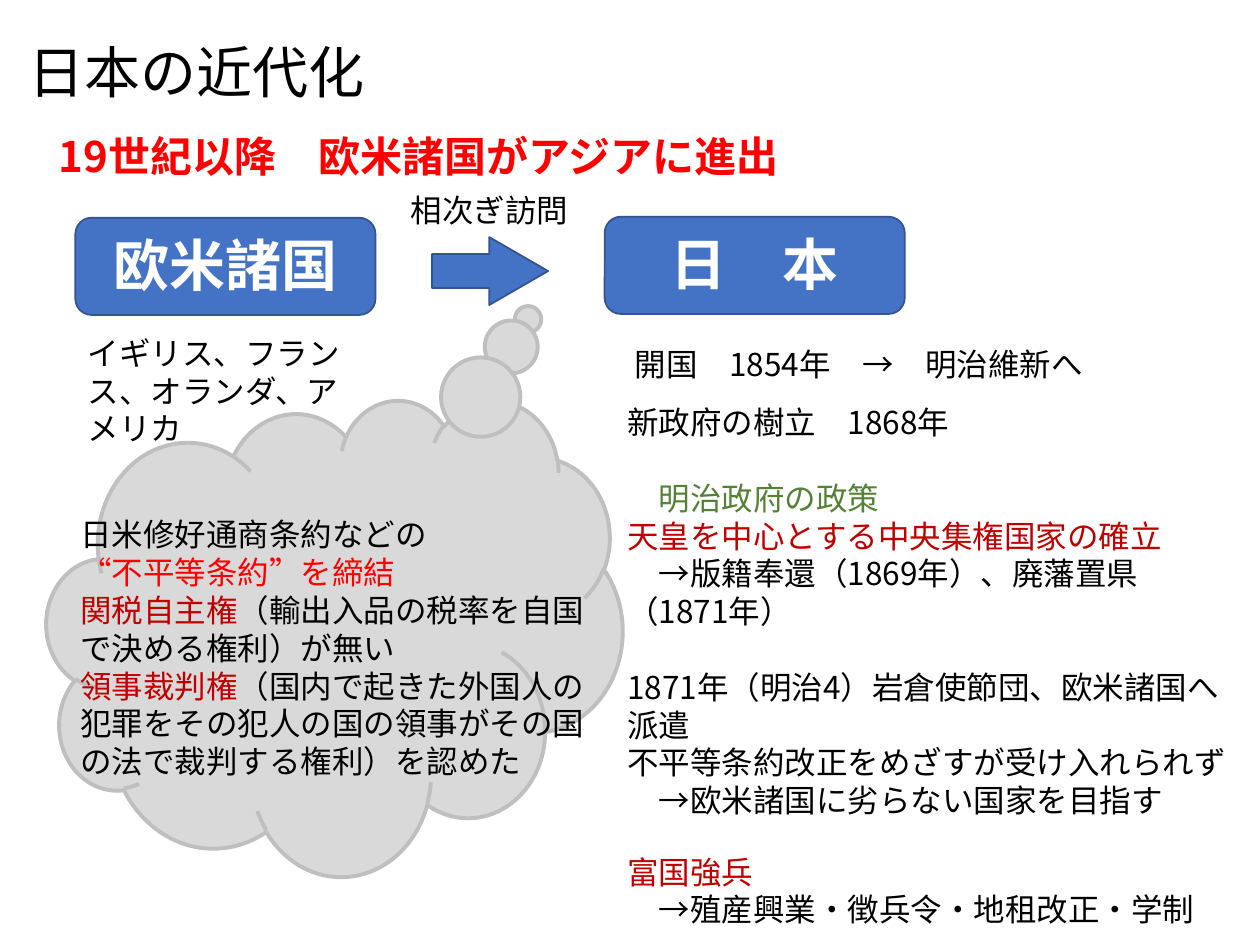
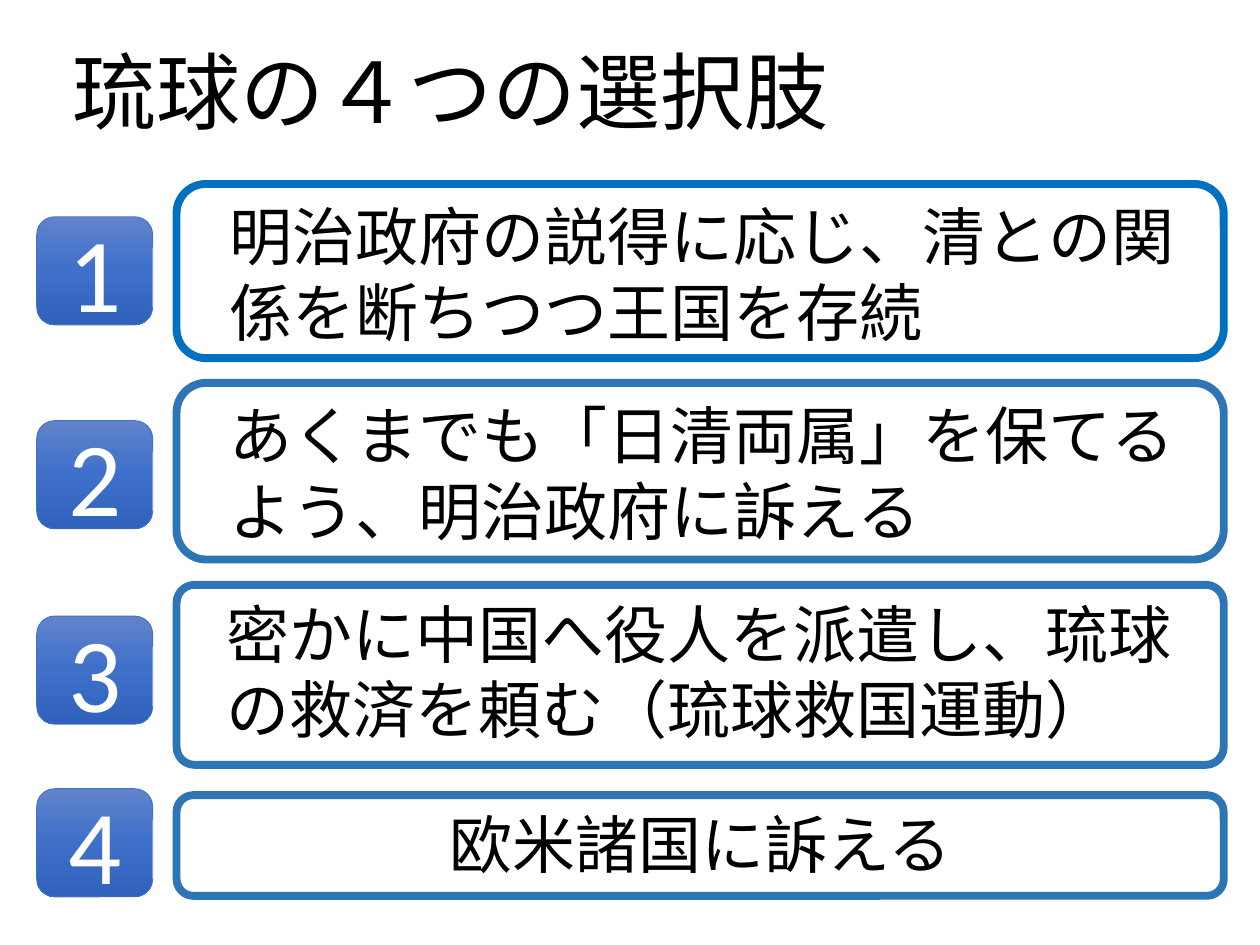
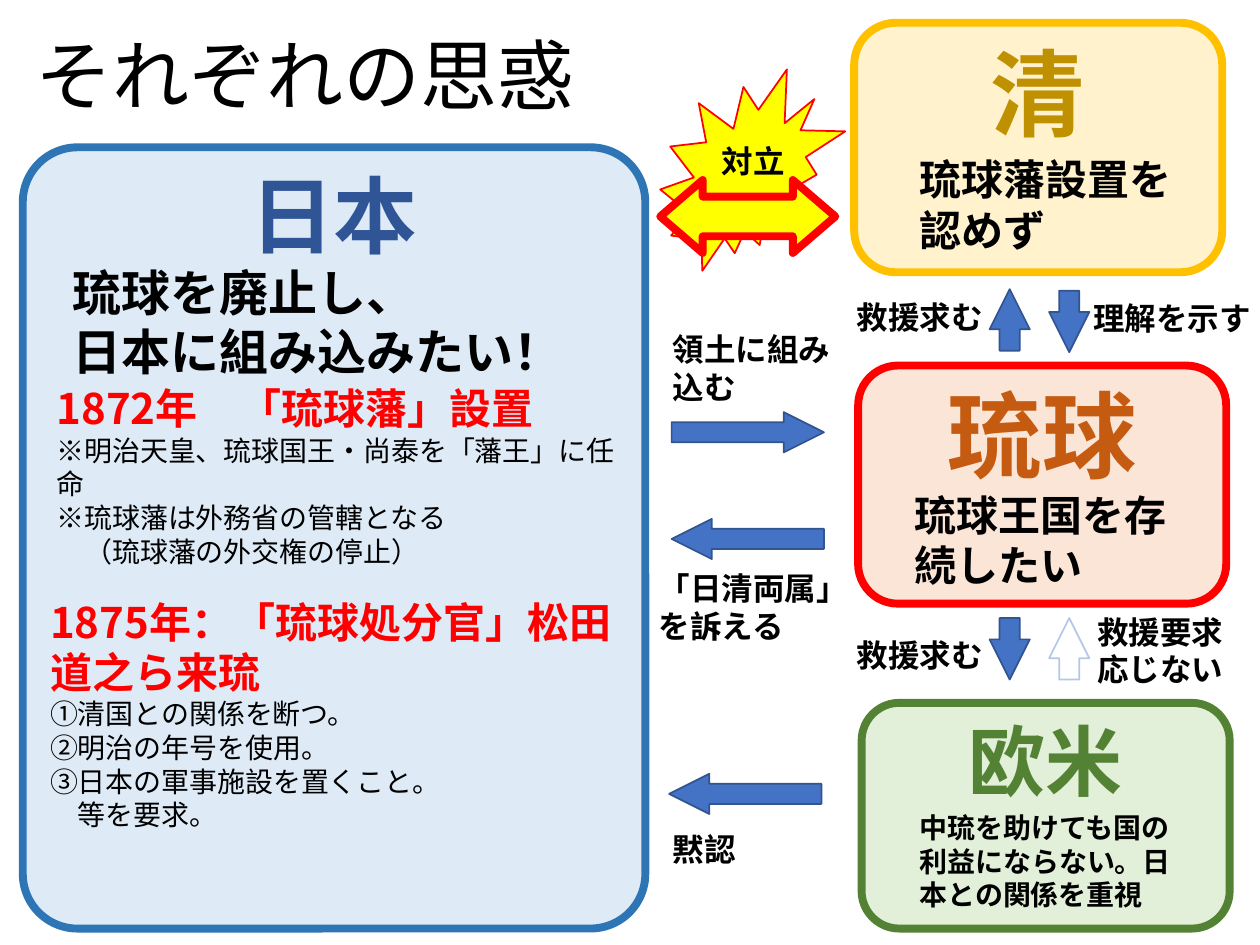
"""Build three slides on Japan's modernisation and the Ryukyu question."""
from copy import deepcopy

from lxml.etree import SubElement
from pptx import Presentation
from pptx.dml.color import RGBColor
from pptx.enum.shapes import MSO_SHAPE
from pptx.enum.text import MSO_ANCHOR, PP_ALIGN
from pptx.oxml.ns import qn
from pptx.util import Cm, Pt

C = {
    "black": "000000", "white": "FFFFFF", "red": "FF0000", "crimson": "C00000",
    "green": "548235", "blue": "4472C4", "edge": "325491", "frame": "2E75B6",
    "frame1": "0070C0", "navy": "2F5597", "sky": "DEEBF7", "pale": "B4C7E7",
    "gold": "FFC000", "ochre": "BF9000", "cream": "FFF2CC", "yellow": "FFFF00",
    "rust": "C55A11", "peach": "FBE5D6", "mint": "E2F0D9",
    "cloud": "D9D9D9", "cloud_edge": "BFBFBF",
    "grad0": "6183CB", "grad1": "3E70CA", "grad2": "3062BB",
}
JP = "Noto Sans CJK JP"
BODY = (0.25, 0.13, 0.25, 0.13)
BOX = (0.1, 0, 0.1, 0)


def add_shape(s, kind, at, fill=None, line="edge", width=1, adj=()):
    sp = s.shapes.add_shape(kind, *map(Cm, at))
    sp.shadow.inherit = False
    if fill:
        sp.fill.solid()
        sp.fill.fore_color.rgb = RGBColor.from_string(C[fill])
    else:
        sp.fill.background()
    sp.line.color.rgb = RGBColor.from_string(C[line])
    sp.line.width = Pt(width)
    for i, value in enumerate(adj):
        sp.adjustments[i] = value
    return sp


def add_text(target, paras, size=18, color="black", bold=False, at=None, font=JP,
             align=PP_ALIGN.LEFT, anchor=MSO_ANCHOR.TOP, ins=BODY, spacing=None):
    sp = target.shapes.add_textbox(*map(Cm, at)) if at else target
    tf = sp.text_frame
    frame = {"word_wrap": True, "vertical_anchor": anchor}
    frame.update(zip(("margin_left", "margin_top", "margin_right", "margin_bottom"), map(Cm, ins)))
    for name, value in frame.items():
        setattr(tf, name, value)
    for i, para in enumerate([paras] if isinstance(paras, str) else paras):
        p = tf.paragraphs[0] if i == 0 else tf.add_paragraph()
        runs, own = para if isinstance(para, tuple) else (para, {})
        fmt = {"size": size, "color": color, "bold": bold, "before": 0, **own}
        for name, value in {"alignment": align, "line_spacing": spacing,
                            "space_before": Pt(fmt["before"])}.items():
            setattr(p, name, value)
        for text, tint in [(runs, fmt["color"])] if isinstance(runs, str) else runs:
            r = p.add_run()
            r.text = text
            for name, value in {"size": Pt(fmt["size"]), "bold": fmt["bold"], "name": font}.items():
                setattr(r.font, name, value)
            r.font.color.rgb = RGBColor.from_string(C[tint])
            SubElement(r._r.get_or_add_rPr(), qn("a:ea")).set("typeface", font)


prs = Presentation()
prs.slide_width, prs.slide_height = Cm(25.4), Cm(19.05)
blank = prs.slide_layouts[6]
title = {"anchor": MSO_ANCHOR.MIDDLE, "spacing": 0.9}
centred = {"align": PP_ALIGN.CENTER, "anchor": MSO_ANCHOR.MIDDLE}

s = prs.slides.add_slide(blank)
add_shape(s, MSO_SHAPE.CLOUD_CALLOUT, (0.94, 8.05, 11.61, 9.6), "cloud", "cloud_edge", 2.25,
          (0.336, -0.668))
add_text(s, [
    "新政府の樹立　1868年",
    ("　明治政府の政策", {"color": "green", "before": 21.6}),
    ("天皇を中心とする中央集権国家の確立", {"color": "crimson"}),
    "　→版籍奉還（1869年）、廃藩置県（1871年）",
    ("1871年（明治4）岩倉使節団、欧米諸国へ派遣", {"before": 21.6}),
    "不平等条約改正をめざすが受け入れられず",
    "　→欧米諸国に劣らない国家を目指す",
    ("富国強兵", {"color": "crimson", "before": 19.2}),
    "　→殖産興業・徴兵令・地租改正・学制",
], at=(12.4, 8, 12.83, 9.4))
for name, x, y in [("欧米諸国", 1.52, 4.39), ("日　本", 12.19, 4.37)]:
    sp = add_shape(s, MSO_SHAPE.ROUNDED_RECTANGLE, (x, y, 6.05, 1.96), "blue")
    add_text(sp, name, 32, "white", True, ins=(0.1, 0, 0.1, 0.1), **centred)
add_shape(s, MSO_SHAPE.RIGHT_ARROW, (8.71, 4.78, 2.34, 1.37), "blue", adj=(0.5, 0.866))
add_text(s, "日本の近代化", 32, at=(0.33, 0.53, 24.46, 1.96), **title)
add_text(s, "19世紀以降　欧米諸国がアジアに進出", 24, "red", True, at=(0.94, 2.51, 16.41, 1.27))
add_text(s, "相次ぎ訪問", at=(8.03, 3.73, 3.75, 1.02))
add_text(s, "イギリス、フランス、オランダ、アメリカ", at=(1.52, 6.6, 6.05, 1.8))
add_text(s, "開国　1854年　→　明治維新へ", at=(12.55, 6.83, 11.07, 1.02))
add_text(s, [
    "日米修好通商条約などの",
    ("“不平等条約”を締結", {"color": "red"}),
    [("関税自主権", "crimson"), ("（輸出入品の税率を自国で決める権利）が無い", "black")],
    [("領事裁判権", "crimson"),
     ("（国内で起きた外国人の犯罪をその犯人の国の領事がその国の法で裁判する権利）を認めた", "black")],
], at=(1.37, 10.26, 11.02, 5.64))

s = prs.slides.add_slide(blank)
add_text(s, "琉球の４つの選択肢", 48, at=(1.22, 0.66, 17.68, 2.31))
left = {"ins": (0.9, 0.1, 0.3, 0.1)}
middle = {"ins": (0.1, 0.1, 0.1, 0.1), "align": PP_ALIGN.CENTER}
options = [
    ("明治政府の説得に応じ、清との関係を断ちつつ王国を存続", 3.71, 3.51, 0.167, "frame1", 4.37, left),
    ("あくまでも「日清両属」を保てるよう、明治政府に訴える", 7.72, 3.56, 0.167, "frame", 8.48, left),
    ("密かに中国へ役人を派遣し、琉球の救済を頼む（琉球救国運動）", 11.79, 3.63, 0.1, "frame", 12.42, left),
    ("欧米諸国に訴える", 16.03, 2.03, 0.167, "frame", 15.9, middle),
]
for i, (text, y, h, adj, line, badge_y, layout) in enumerate(options, 1):
    sp = add_shape(s, MSO_SHAPE.ROUNDED_RECTANGLE, (3.56, y, 21.11, h), None, line, 4.5, (adj,))
    add_text(sp, text, 36, **layout)
    sp = add_shape(s, MSO_SHAPE.ROUNDED_RECTANGLE, (0.74, badge_y, 2.34, 2.18), None, "blue", 0.5)
    sp.fill.gradient()
    sp.fill.gradient_angle = 270
    stops = sp._element.spPr.find(".//" + qn("a:gsLst"))
    stops.append(deepcopy(stops[-1]))
    for n, stop in enumerate(sp.fill.gradient_stops):
        stop.position = n / 2
        stop.color.rgb = RGBColor.from_string(C[f"grad{n}"])
    add_text(sp, str(i), 60, "white", font="Calibri", **centred)

s = prs.slides.add_slide(blank)
add_text(s, "それぞれの思惑", 44, at=(0.46, 0.48, 16.92, 2.26), **title)
for name, at, size, color, fill, line, adj in [
    ("日本", (0.46, 2.97, 12.55, 15.75), 48, "navy", "sky", "frame", 0.088),
    ("清", (17.22, 0.46, 7.42, 5.03), 54, "ochre", "cream", "gold", 0.167),
    ("琉球", (17.3, 7.37, 7.42, 4.8), 54, "rust", "peach", "red", 0.167),
    ("欧米", (17.37, 14.17, 7.42, 4.55), 44, "green", "mint", "green", 0.167),
]:
    sp = add_shape(s, MSO_SHAPE.ROUNDED_RECTANGLE, at, fill, line, 4.5, (adj,))
    add_text(sp, name, size, color, True, ins=BOX, align=PP_ALIGN.CENTER)

add_shape(s, MSO_SHAPE.EXPLOSION2, (13.31, 1.4, 3.73, 4.06), "yellow", "red")
add_shape(s, MSO_SHAPE.LEFT_RIGHT_ARROW, (13.31, 3.63, 3.53, 1.47), "yellow", "red", 4.5,
          (0.542, 0.583))
for kind, x, y in [
    (MSO_SHAPE.RIGHT_ARROW, 13.54, 8.31), (MSO_SHAPE.LEFT_ARROW, 13.54, 10.46),
    (MSO_SHAPE.LEFT_ARROW, 13.49, 15.6),
]:
    add_shape(s, kind, (x, y, 3.07, 0.81), "blue", adj=(0.5, 1))
for kind, x, y, fill, line in [
    (MSO_SHAPE.UP_ARROW, 19.95, 5.83, "blue", "edge"),
    (MSO_SHAPE.DOWN_ARROW, 21.15, 5.86, "blue", "edge"),
    (MSO_SHAPE.DOWN_ARROW, 19.95, 12.46, "blue", "edge"),
    (MSO_SHAPE.UP_ARROW, 21.15, 12.46, "white", "pale"),
]:
    add_shape(s, kind, (x, y, 0.81, 1.24), fill, line, adj=(0.5, 1))

for text, size, at in [
    ("対立", 18, (14.3, 2.74, 2.64, 1.02)),
    ("領土に組み込む", 18, (13.31, 6.53, 3.71, 1.8)),
    ("「日清両属」を訴える", 18, (13.03, 11.35, 4.35, 1.8)),
    ("黙認", 18, (13.31, 16.61, 2.06, 1.02)),
    ("救援求む", 18, (17.02, 5.87, 3.71, 1.02)),
    ("理解を示す", 18, (21.79, 5.89, 3.75, 1.02)),
    ("救援求む", 18, (17.02, 12.7, 3.3, 1.02)),
    ("救援要求応じない", 18, (21.87, 12.22, 3.07, 1.8)),
    ("琉球藩設置を認めず", 24, (18.29, 2.97, 5.92, 2.31)),
    ("琉球王国を存続したい", 24, (18.19, 9.73, 5.99, 2.31)),
    ("中琉を助けても国の利益にならない。日本との関係を重視", 16, (18.29, 16.21, 5.99, 2.31)),
    (["琉球を廃止し、", "日本に組み込みたい！"], 28, (1.22, 5.16, 11.07, 2.64)),
]:
    add_text(s, text, size, bold=True, at=at)

head = {"size": 24, "color": "red", "bold": True}
for heading, notes, at in [
    ("1872年　「琉球藩」設置",
     ["※明治天皇、琉球国王・尚泰を「藩王」に任命", "※琉球藩は外務省の管轄となる",
      "　（琉球藩の外交権の停止）"], (0.89, 7.59, 11.89, 3.33)),
    ("1875年：「琉球処分官」松田道之ら来琉",
     ["①清国との関係を断つ。", "②明治の年号を使用。", "③日本の軍事施設を置くこと。",
      "　等を要求。"], (0.76, 11.89, 12.34, 5.05)),
]:
    add_text(s, [(heading, head)] + notes, 16, at=at)

prs.save("out.pptx")
